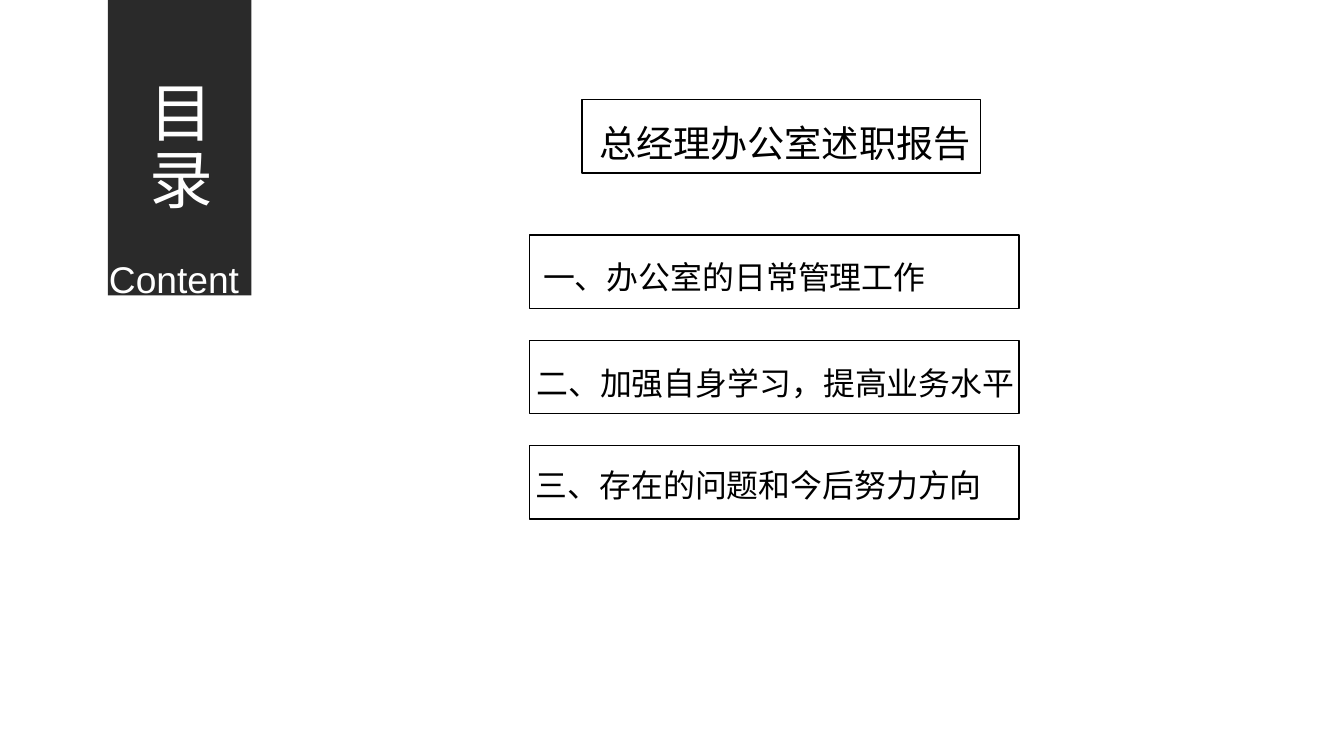
from lxml import etree
from pptx import Presentation
from pptx import util as u
from pptx.dml.color import RGBColor
from pptx.enum import shapes, text
from pptx.oxml import ns

BLACK = RGBColor(0x00, 0x00, 0x00)
WHITE = RGBColor(0xFF, 0xFF, 0xFF)
CHARCOAL = RGBColor(0x2A, 0x2A, 0x2A)
LATIN_FONT = "Arial"
CHINESE_FONT = "Noto Sans CJK SC"
LEFT = text.PP_ALIGN.LEFT
CENTER = text.PP_ALIGN.CENTER
RIGHT = text.PP_ALIGN.RIGHT


def set_values(target, values):
    for name, value in values.items():
        setattr(target, name, value)


class ContentsSlide:
    line_spacing = 1.2
    border_width = u.Pt(1)

    def __init__(self, presentation):
        self.slide = presentation.slides.add_slide(presentation.slide_layouts[6])

    def rectangle(self, area, fill=None, border=None):
        shape = self.slide.shapes.add_shape(
            shapes.MSO_SHAPE.RECTANGLE, *map(u.Inches, area))
        shape.shadow.inherit = False
        if fill is None:
            shape.fill.background()
        else:
            shape.fill.solid()
            shape.fill.fore_color.rgb = fill
        if border is None:
            shape.line.fill.background()
        else:
            shape.line.color.rgb = border
            shape.line.width = self.border_width

    def label(self, area, words, size, font=CHINESE_FONT, color=BLACK,
              align=LEFT, wrap=False, vertical=False, tracking=0):
        shape = self.slide.shapes.add_textbox(*map(u.Inches, area))
        frame = shape.text_frame
        set_values(frame, {
            "word_wrap": wrap,
            "auto_size": text.MSO_AUTO_SIZE.SHAPE_TO_FIT_TEXT,
        })
        if vertical:
            shape.element.txBody.bodyPr.set("vert", "eaVert")
        paragraph = frame.paragraphs[0]
        set_values(paragraph, {"alignment": align, "line_spacing": self.line_spacing})
        run = paragraph.add_run()
        run.text = words
        set_values(run.font, {"size": u.Pt(size), "name": font})
        run.font.color.rgb = color
        properties = run.font._element
        east_asian = etree.SubElement(properties, ns.qn("a:ea"))
        east_asian.set("typeface", CHINESE_FONT)
        if tracking:
            properties.set("spc", str(tracking * 100))


def main():
    presentation = Presentation()
    set_values(presentation, {
        "slide_width": u.Inches(14.06),
        "slide_height": u.Inches(7.91),
    })
    contents = ContentsSlide(presentation)

    contents.rectangle((1.13, 0, 1.5, 3.09), fill=CHARCOAL)
    contents.label((1.39, 0.74, 1.09, 1.73), "目录", 48, color=WHITE,
                   align=CENTER, wrap=True, vertical=True, tracking=3)
    contents.label((0.97, 2.54, 1.7, 0.67), "Content", 28, font=LATIN_FONT,
                   color=WHITE, align=CENTER, wrap=True)

    contents.label((6.17, 1.12, 4.13, 0.62), "总经理办公室述职报告", 28, font=LATIN_FONT)
    contents.rectangle((6.09, 1.04, 4.17, 0.77), border=BLACK)

    chapters = [
        ("一、办公室的日常管理工作", 5.54, 2.57, 4.24),
        ("二、加强自身学习，提高业务水平", 5.46, 3.68, 5.25),
        ("三、存在的问题和今后努力方向", 5.46, 4.74, 4.91),
    ]
    first_top, pitch = 2.46, 1.1
    for index, (title, left, top, width) in enumerate(chapters):
        contents.label((left, top, width, 0.52), title, 24, align=RIGHT)
        contents.rectangle((5.54, first_top + index * pitch, 5.12, 0.77), border=BLACK)

    presentation.save("out.pptx")


if __name__ == "__main__":
    main()
